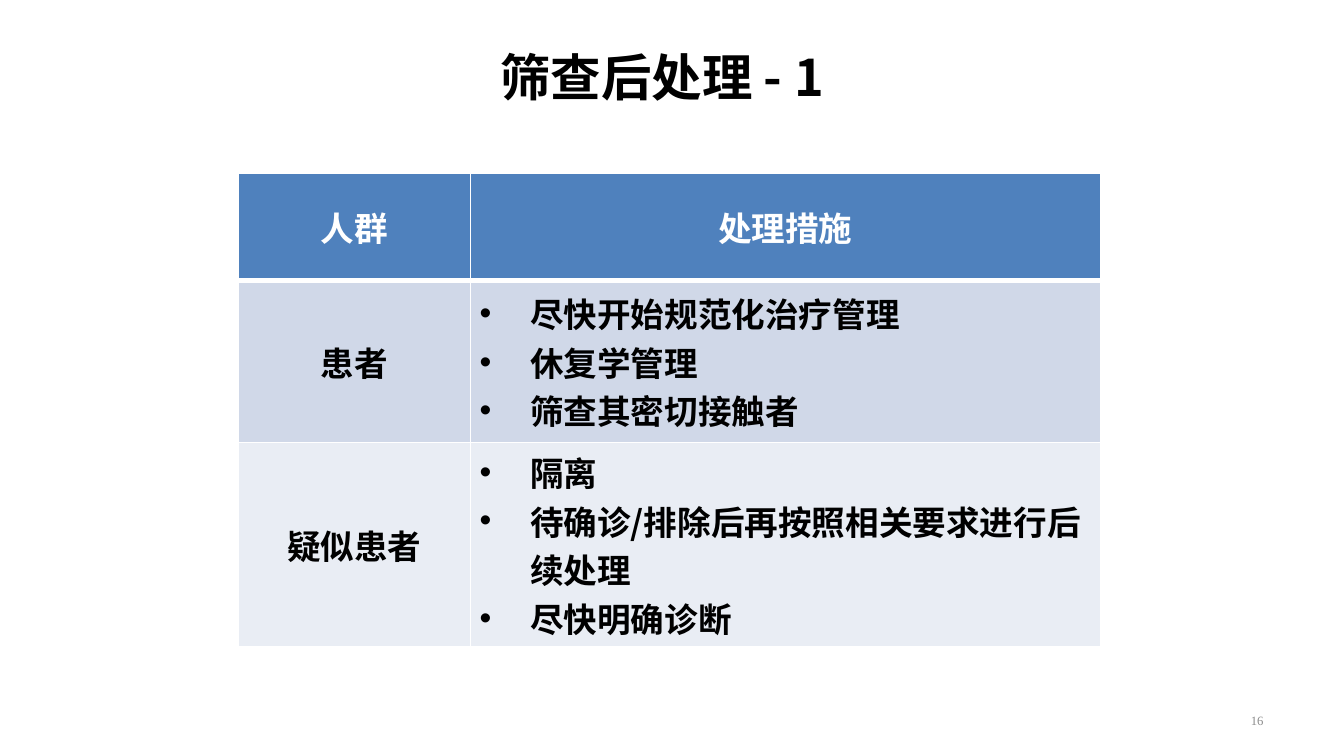
from lxml.etree import SubElement
from pptx import Presentation
from pptx.dml.color import RGBColor
from pptx.enum.text import MSO_ANCHOR, MSO_AUTO_SIZE, PP_ALIGN
from pptx.oxml import parse_xml
from pptx.oxml.ns import nsdecls, qn
from pptx.util import Pt

HEADING_FONT = "Noto Sans CJK SC"
HEADER = ["人群", "处理措施"]
GROUPS = [
    ("患者", ["尽快开始规范化治疗管理", "休复学管理", "筛查其密切接触者"], "D0D8E8"),
    ("疑似患者", ["隔离", "待确诊/排除后再按照相关要求进行后续处理", "尽快明确诊断"], "E9EDF4"),
]


def color(value):
    """Turn a hex string into a colour."""
    return RGBColor.from_string(value)


def add_bullet(paragraph, indent=27):
    """Give a paragraph a round bullet with a hanging indent."""
    properties = paragraph._p.get_or_add_pPr()
    properties.set("marL", str(Pt(indent)))
    properties.set("indent", str(-Pt(indent)))
    SubElement(properties, qn("a:buFont")).set("typeface", "Arial")
    SubElement(properties, qn("a:buChar")).set("char", "•")


def write_text(frame, lines, size=18, font=HEADING_FONT, fill="000000", bold=True,
               align=PP_ALIGN.CENTER, bullets=False):
    """Write one formatted paragraph for each line into a text frame."""
    frame.word_wrap = True
    for index, line in enumerate(lines):
        paragraph = frame.paragraphs[0] if index == 0 else frame.add_paragraph()
        paragraph.alignment = align
        if bullets:
            add_bullet(paragraph)
        run = paragraph.add_run()
        run.text = line
        run.font.size = Pt(size)
        run.font.bold = bold
        run.font.name = font
        run.font.color.rgb = color(fill)
        SubElement(run._r.get_or_add_rPr(), qn("a:ea")).set("typeface", font)


def format_cell(cell, fill, bottom=1, top=1):
    """Fill a cell and draw its white borders."""
    cell.fill.solid()
    cell.fill.fore_color.rgb = color(fill)
    cell.vertical_anchor = MSO_ANCHOR.MIDDLE
    cell.margin_left = cell.margin_right = Pt(5)
    cell.margin_top = cell.margin_bottom = Pt(2.7)
    properties = cell._tc.get_or_add_tcPr()
    widths = {"lnL": 1, "lnR": 1, "lnT": top, "lnB": bottom}
    for index, (side, width) in enumerate(widths.items()):
        border = parse_xml(
            f'<a:{side} {nsdecls("a")} w="{Pt(width)}"><a:solidFill>'
            f'<a:srgbClr val="FFFFFF"/></a:solidFill></a:{side}>')
        properties.insert(index, border)


def place_title(slide, left, top, width, height):
    """Place the slide title in its placeholder."""
    title = slide.shapes.title
    title.left, title.top, title.width, title.height = map(Pt, (left, top, width, height))
    title.text_frame.auto_size = MSO_AUTO_SIZE.NONE
    title.text_frame.vertical_anchor = MSO_ANCHOR.MIDDLE
    write_text(title.text_frame, ["筛查后处理 - 1"], size=27)


def place_measures_table(slide, left, top, width, height):
    """Place the table of groups and their measures."""
    frame = slide.shapes.add_table(len(GROUPS) + 1, len(HEADER),
                                   *map(Pt, (left, top, width, height)))
    table = frame.table
    group_width = 124.5
    table.columns[0].width = Pt(group_width)
    table.columns[1].width = Pt(width - group_width)
    header_height, patient_height = 57.5, 86.5
    row_heights = [header_height, patient_height, height - header_height - patient_height]
    for row, row_height in zip(table.rows, row_heights):
        row.height = Pt(row_height)

    for column, text in enumerate(HEADER):
        cell = table.cell(0, column)
        format_cell(cell, "4F81BD", bottom=3)
        write_text(cell.text_frame, [text], fill="FFFFFF")
    for row, (group, measures, fill) in enumerate(GROUPS, start=1):
        group_cell, measures_cell = table.cell(row, 0), table.cell(row, 1)
        for cell in (group_cell, measures_cell):
            format_cell(cell, fill, top=3 if row == 1 else 1)
        write_text(group_cell.text_frame, [group])
        write_text(measures_cell.text_frame, measures, align=PP_ALIGN.LEFT, bullets=True)


def place_page_number(slide, left, top, width, height):
    """Place the page number at the lower right."""
    box = slide.shapes.add_textbox(*map(Pt, (left, top, width, height)))
    box.text_frame.vertical_anchor = MSO_ANCHOR.MIDDLE
    write_text(box.text_frame, ["16"], size=6.8, font="Times New Roman",
               fill="8C8C8C", bold=False, align=PP_ALIGN.RIGHT)


def main():
    """Build and save the presentation."""
    presentation = Presentation()
    presentation.slide_width, presentation.slide_height = Pt(720), Pt(405)
    slide = presentation.slides.add_slide(presentation.slide_layouts[5])
    place_measures_table(slide, 127.5, 93, 462, 253.5)
    place_page_number(slide, 516, 375, 168, 21.5)
    place_title(slide, 89.5, 7, 530.5, 67.5)
    presentation.save("out.pptx")


if __name__ == "__main__":
    main()
